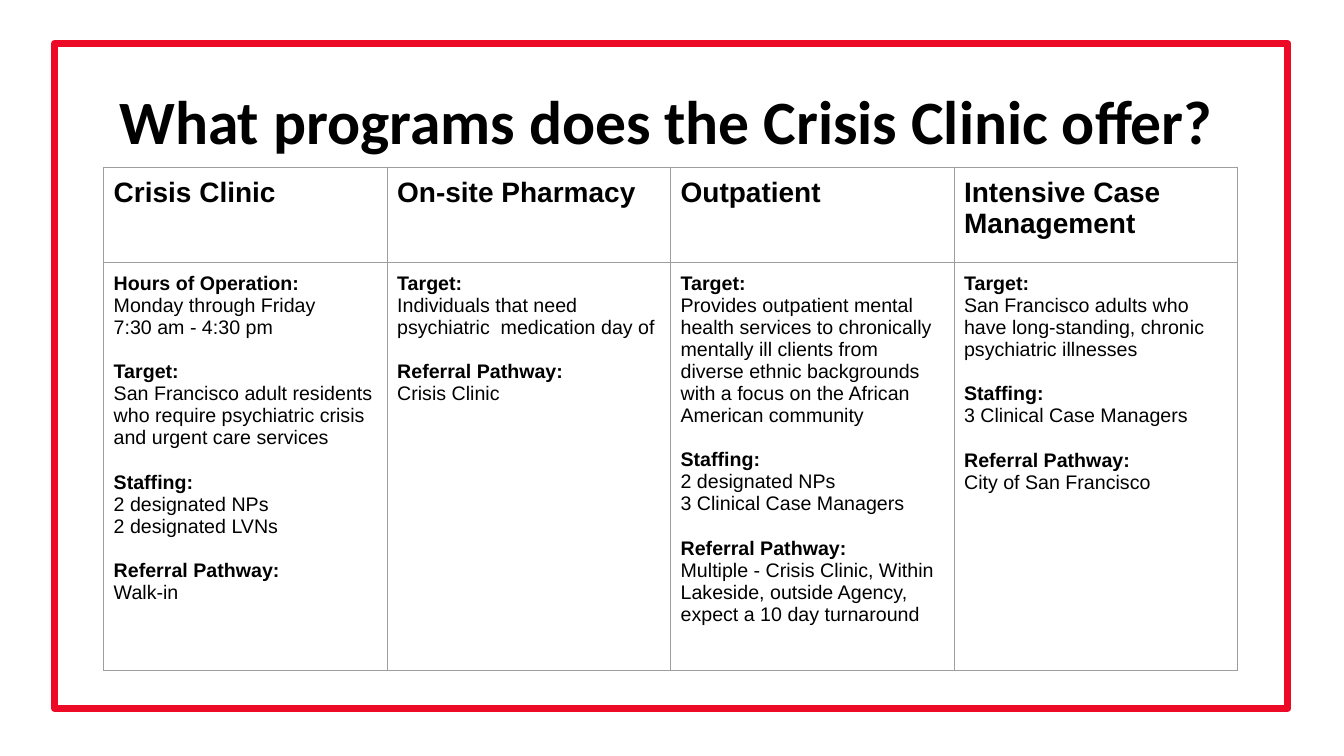
from dataclasses import dataclass

from lxml import etree
from pptx import Presentation
from pptx.dml.color import RGBColor
from pptx.enum import shapes, text
from pptx.oxml import ns
from pptx.util import Pt


@dataclass(frozen=True)
class Theme:
    ink: str = "000000"
    frame: str = "EC0A27"
    grid: str = "9E9E9E"
    title_font: str = "Calibri"
    table_font: str = "Arial"
    title_size: float = 44
    heading_size: float = 20
    body_size: float = 14
    section_gap: float = 16
    frame_width: float = 5
    grid_width: float = 0.75
    cell_inset: float = 7.2


THEME = Theme()

PROGRAMS = {
    "Crisis Clinic": [
        ("Hours of Operation:", ["Monday through Friday", "7:30 am - 4:30 pm"]),
        ("Target:", ["San Francisco adult residents who require psychiatric "
                     "crisis and urgent care services"]),
        ("Staffing:", ["2 designated NPs", "2 designated LVNs"]),
        ("Referral Pathway:", ["Walk-in"]),
    ],
    "On-site Pharmacy": [
        ("Target:", ["Individuals that need psychiatric  medication day of"]),
        ("Referral Pathway:", ["Crisis Clinic"]),
    ],
    "Outpatient": [
        ("Target:", ["Provides outpatient mental health services to chronically "
                     "mentally ill clients from diverse ethnic backgrounds with "
                     "a focus on the African American community"]),
        ("Staffing:", ["2 designated NPs", "3 Clinical Case Managers"]),
        ("Referral Pathway:", ["Multiple - Crisis Clinic, Within Lakeside, "
                               "outside Agency, expect a 10 day turnaround"]),
    ],
    "Intensive Case Management": [
        ("Target:", ["San Francisco adults who have long-standing, chronic "
                     "psychiatric illnesses"]),
        ("Staffing:", ["3 Clinical Case Managers"]),
        ("Referral Pathway:", ["City of San Francisco"]),
    ],
}


def add_run(paragraph, wording, font, size, bold):
    run = paragraph.add_run()
    run.text = wording
    run.font.name = font
    run.font.size = Pt(size)
    run.font.bold = bold
    run.font.color.rgb = RGBColor.from_string(THEME.ink)


def add_frame(slide, left, top, width, height):
    frame = slide.shapes.add_shape(shapes.MSO_SHAPE.RECTANGLE,
                                   Pt(left), Pt(top), Pt(width), Pt(height))
    frame.shadow.inherit = False
    frame.fill.background()
    frame.line.color.rgb = RGBColor.from_string(THEME.frame)
    frame.line.width = Pt(THEME.frame_width)


def place_title(slide, wording, left, top, width, height):
    title = slide.shapes.title
    title.left, title.top = Pt(left), Pt(top)
    title.width, title.height = Pt(width), Pt(height)
    title.text_frame.auto_size = text.MSO_AUTO_SIZE.NONE
    title.text_frame.vertical_anchor = text.MSO_ANCHOR.MIDDLE
    heading = title.text_frame.paragraphs[0]
    heading.alignment = text.PP_ALIGN.LEFT
    heading.line_spacing = 0.9
    add_run(heading, wording, THEME.title_font, THEME.title_size, True)


def format_cell(cell):
    properties = cell._tc.get_or_add_tcPr()
    for side in ("a:lnL", "a:lnR", "a:lnT", "a:lnB"):
        border = etree.SubElement(properties, ns.qn(side), w=str(Pt(THEME.grid_width)))
        fill = etree.SubElement(border, ns.qn("a:solidFill"))
        etree.SubElement(fill, ns.qn("a:srgbClr"), val=THEME.grid)
    cell.fill.background()
    cell.margin_left = cell.margin_right = Pt(THEME.cell_inset)
    cell.margin_top = cell.margin_bottom = Pt(THEME.cell_inset)


def write_sections(cell, sections):
    lines = [(wording, index == 0, index == 0 and number > 0)
             for number, (label, details) in enumerate(sections)
             for index, wording in enumerate([label, *details])]
    for position, (wording, is_label, starts_section) in enumerate(lines):
        frame = cell.text_frame
        paragraph = frame.add_paragraph() if position else frame.paragraphs[0]
        if starts_section:
            paragraph.space_before = Pt(THEME.section_gap)
        add_run(paragraph, wording, THEME.table_font, THEME.body_size, is_label)


def add_programs(slide, left, top, width, height, heading_height):
    programs = slide.shapes.add_table(2, len(PROGRAMS), Pt(left), Pt(top),
                                      Pt(width), Pt(height)).table
    programs.first_row = False
    programs.horz_banding = False
    programs.rows[0].height = Pt(heading_height)
    programs.rows[1].height = Pt(height - heading_height)
    for cell in programs.iter_cells():
        format_cell(cell)
    for column, (program, sections) in enumerate(PROGRAMS.items()):
        programs.columns[column].width = Pt(width / len(PROGRAMS))
        add_run(programs.cell(0, column).text_frame.paragraphs[0], program,
                THEME.table_font, THEME.heading_size, True)
        write_sections(programs.cell(1, column), sections)


def main():
    deck = Presentation()
    deck.slide_width, deck.slide_height = Pt(960), Pt(540)
    slide = deck.slides.add_slide(deck.slide_layouts[5])
    add_frame(slide, 39, 31, 881, 475)
    add_programs(slide, 74, 119.5, 810, 359.5, 68)
    place_title(slide, "What programs does the Crisis Clinic offer?",
                78, 36.5, 828, 104.5)
    deck.save("out.pptx")


if __name__ == "__main__":
    main()
